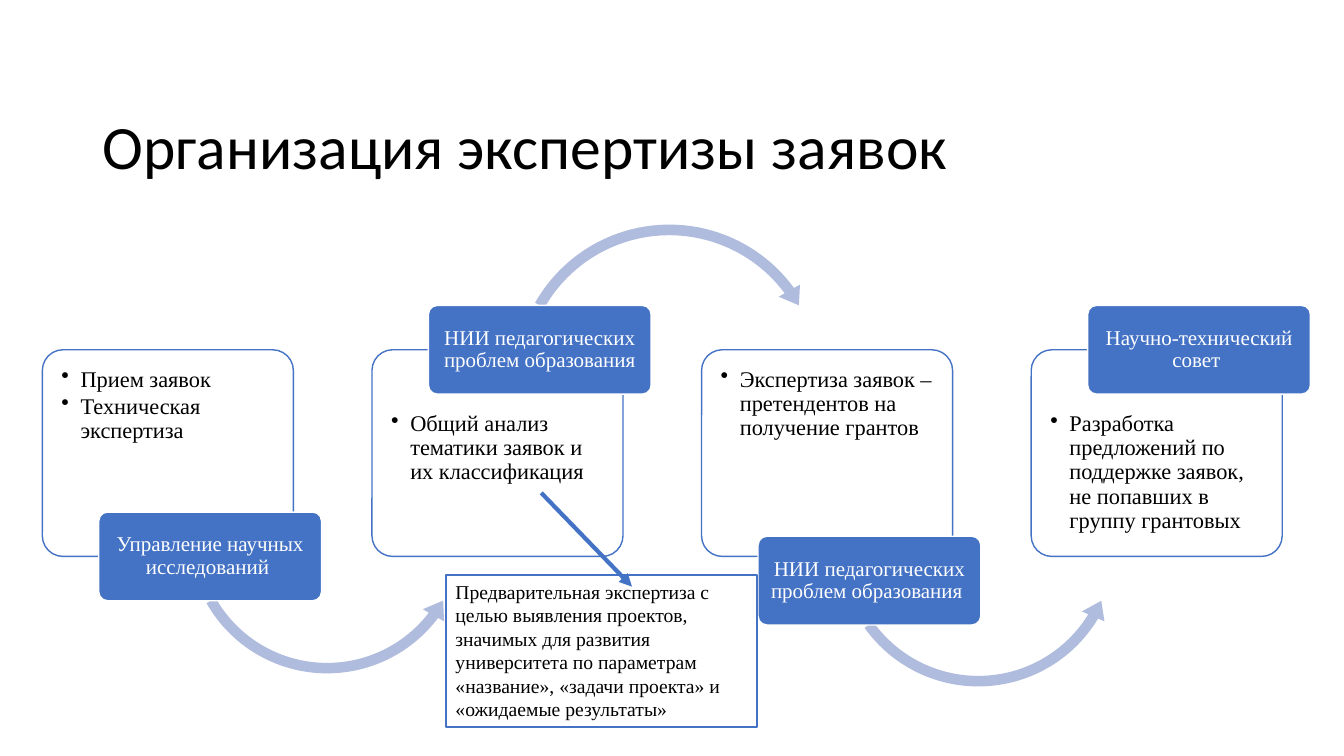
from lxml import etree
from pptx import Presentation
from pptx import util as u
from pptx.dml.color import RGBColor
from pptx.enum import shapes, text
from pptx.oxml.ns import qn

PX = 9144  # EMU; 100 px to the inch
BLUE = RGBColor(0x44, 0x72, 0xC4)
PALE_BLUE = RGBColor(0xB0, 0xBC, 0xDE)
WHITE = RGBColor(0xFF, 0xFF, 0xFF)
BLACK = RGBColor(0, 0, 0)
KIND = shapes.MSO_SHAPE
SERIF = "Times New Roman"

CARD_LEFT, CARD_TOP, CARD_W, CARD_H, CARD_STEP = 42, 347, 249, 205, 327
LABEL_SHIFT, LABEL_W, LABEL_H = 56, 221, 88
BULLET_INDENT = 19

# tasks, who does them, label top, task text inset, arrow (kind, box, adjustments)
STEPS = [
    (["Прием заявок", "Техническая экспертиза"],
     "Управление научных исследований ", 508, 12,
     (KIND.LEFT_CIRCULAR_ARROW, (180, 386, 289, 289),
      (0.036, 4.53, 22.285, 90.245, 0.042))),
    (["Общий анализ тематики заявок и их классификация"],
     "НИИ педагогических проблем образования", 303, 56,
     (KIND.CIRCULAR_ARROW, (504, 216, 320, 320),
      (0.033, 4.046, 194.199, 125.755, 0.038))),
    (["Экспертиза заявок – претендентов на получение грантов"],
     "НИИ педагогических проблем образования ", 532, 12,
     (KIND.LEFT_CIRCULAR_ARROW, (825, 397, 291, 291),
      (0.036, 4.493, 18.711, 86.708, 0.042))),
    (["Разработка предложений по поддержке заявок, не попавших в группу грантовых"],
     "Научно-технический совет ", 303, 56, None),
]

deck = Presentation()
deck.slide_width, deck.slide_height = u.Inches(13.333), u.Inches(7.5)
slide = deck.slides.add_slide(deck.slide_layouts[6])


def add_block(kind, box, fill, line=None, line_pt=1, adjustments=()):
    """Add a shadowless preset shape; box is left, top, width, height in px."""
    block = slide.shapes.add_shape(kind, *(n * PX for n in box))
    block.shadow.inherit = False
    for i, value in enumerate(adjustments):
        block.adjustments[i] = value
    block.fill.solid()
    block.fill.fore_color.rgb = fill
    if line is None:
        block.line.fill.background()
    else:
        block.line.color.rgb = line
        block.line.width = u.Pt(line_pt)
    return block


def write(holder, lines, size, color, font=SERIF, anchor=text.MSO_ANCHOR.TOP,
          insets=(10, 5, 10, 5), **paragraph_format):
    """Fill a shape with paragraphs; insets are left, top, right, bottom in px."""
    frame = holder.text_frame
    frame.word_wrap = True
    frame.vertical_anchor = anchor
    for side, inset in zip(("left", "top", "right", "bottom"), insets):
        setattr(frame, f"margin_{side}", inset * PX)
    frame.text = "\n".join(lines)
    for paragraph in frame.paragraphs:
        format_values = {"alignment": text.PP_ALIGN.LEFT, **paragraph_format}
        for name, value in format_values.items():
            setattr(paragraph, name, value)
        for run in paragraph.runs:
            run.font.name, run.font.size = font, u.Pt(size)
            run.font.color.rgb = color
    return frame


title = slide.shapes.add_textbox(*(n * PX for n in (92, 64, 1150, 122)))
write(title, ["Организация экспертизы заявок"], 44, BLACK, font="Calibri",
      anchor=text.MSO_ANCHOR.BOTTOM, line_spacing=0.9)

for number, (tasks, performer, label_top, text_top, arrow) in enumerate(STEPS):
    left = CARD_LEFT + number * CARD_STEP
    card = add_block(KIND.ROUNDED_RECTANGLE, (left, CARD_TOP, CARD_W, CARD_H),
                     WHITE, BLUE, adjustments=[0.1])
    card_color = card.fill._xPr.find(qn("a:solidFill"))[0]
    etree.SubElement(card_color, qn("a:alpha"), val="90000")
    task_frame = write(card, tasks, 16, BLACK, insets=(13, text_top, 12, 5),
                       line_spacing=0.9, space_after=u.Pt(2))
    for task in task_frame.paragraphs:
        properties = task._p.get_or_add_pPr()
        properties.set("marL", str(BULLET_INDENT * PX))
        properties.set("indent", str(-BULLET_INDENT * PX))
        etree.SubElement(properties, qn("a:buChar"), char="•")

    if arrow:
        arrow_kind, arrow_box, arrow_adjustments = arrow
        add_block(arrow_kind, arrow_box, PALE_BLUE, adjustments=arrow_adjustments)

    label = add_block(KIND.ROUNDED_RECTANGLE,
                      (left + LABEL_SHIFT, label_top, LABEL_W, LABEL_H),
                      BLUE, WHITE, adjustments=[0.1])
    write(label, [performer], 15, WHITE, anchor=text.MSO_ANCHOR.MIDDLE,
          insets=(3, 2, 3, 2), alignment=text.PP_ALIGN.CENTER, line_spacing=0.9)

pre_review = add_block(KIND.RECTANGLE, (442, 570, 309, 151), WHITE, BLUE, 1.5)
write(pre_review, ["Предварительная экспертиза с целью выявления проектов, значимых для "
                   "развития университета по параметрам «название», «задачи проекта» и "
                   "«ожидаемые результаты»"], 14, BLACK)

pointer = slide.shapes.add_connector(
    shapes.MSO_CONNECTOR.STRAIGHT, *(n * PX for n in (537, 489, 627, 582)))
pointer.line.color.rgb = BLUE
pointer.line.width = u.Pt(3)
etree.SubElement(pointer.line._get_or_add_ln(), qn("a:tailEnd"), type="triangle")
etree.SubElement(pointer._element.spPr, qn("a:effectLst"))

deck.save("out.pptx")
